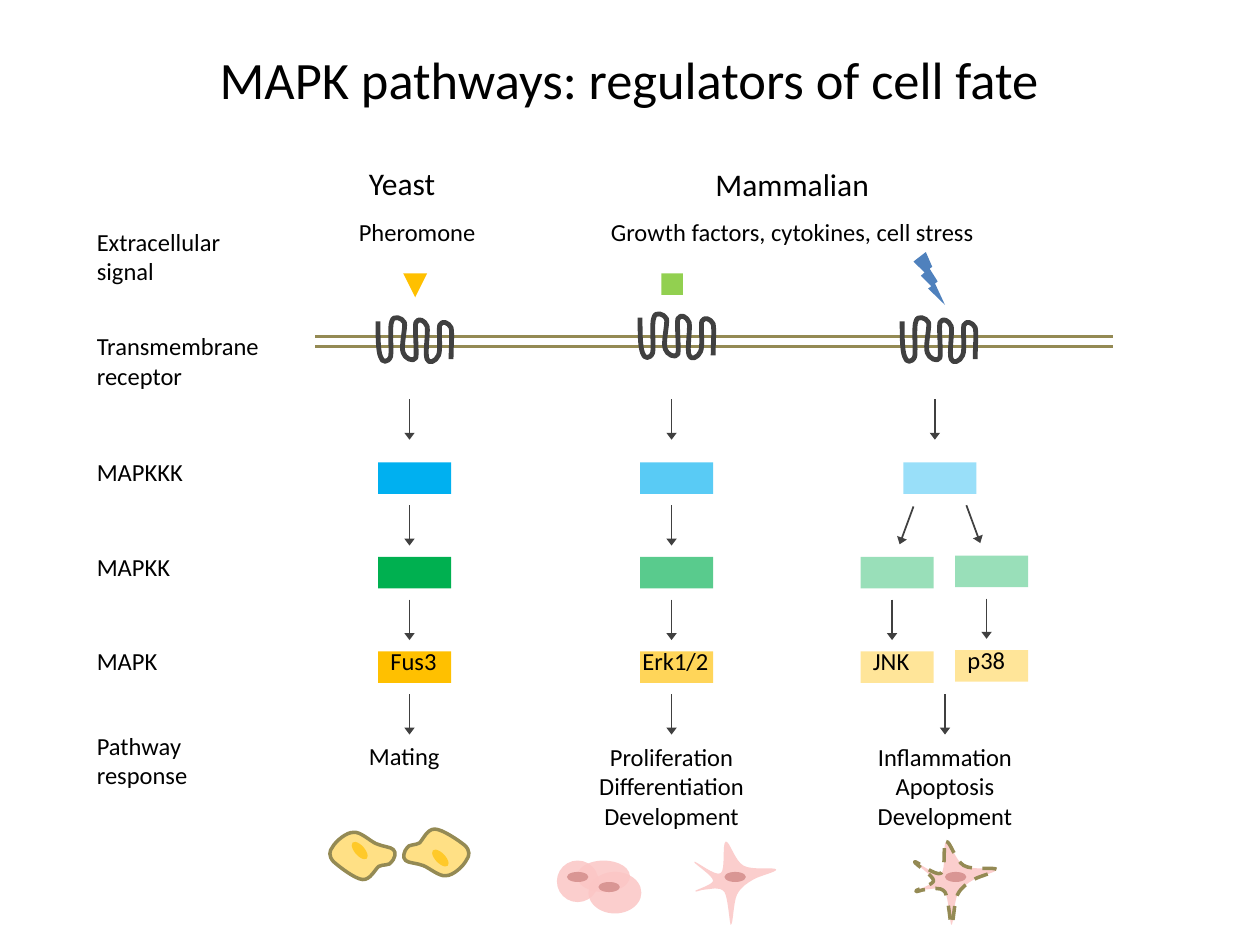
"""Build a slide that compares MAPK pathways in yeast and mammalian cells."""
from dataclasses import dataclass
from math import cos, radians, sin
from typing import Optional

from lxml import etree
from pptx import Presentation
from pptx.dml.color import RGBColor
from pptx.enum.dml import MSO_LINE
from pptx.enum.shapes import MSO_CONNECTOR, MSO_SHAPE
from pptx.enum.text import MSO_ANCHOR, MSO_AUTO_SIZE, PP_ALIGN
from pptx.oxml.ns import qn
from pptx.util import Cm, Pt

RECTANGLE, OVAL = MSO_SHAPE.RECTANGLE, MSO_SHAPE.OVAL
TRIANGLE, BOLT = MSO_SHAPE.ISOSCELES_TRIANGLE, MSO_SHAPE.LIGHTNING_BOLT
STRAIGHT, DASH = MSO_CONNECTOR.STRAIGHT, MSO_LINE.DASH
CENTER, LEFT = PP_ALIGN.CENTER, PP_ALIGN.LEFT
MIDDLE, TOP = MSO_ANCHOR.MIDDLE, MSO_ANCHOR.TOP
FIT_TEXT = MSO_AUTO_SIZE.SHAPE_TO_FIT_TEXT

BLACK = RGBColor(0x00, 0x00, 0x00)
GRAY = RGBColor(0x40, 0x40, 0x40)
OLIVE = RGBColor(0x94, 0x8A, 0x54)
AMBER = RGBColor(0xFF, 0xC0, 0x00)
BLUE = RGBColor(0x4F, 0x81, 0xBD)
LIME = RGBColor(0x92, 0xD0, 0x50)
SKY = RGBColor(0x00, 0xB0, 0xF0)
GREEN = RGBColor(0x00, 0xB0, 0x50)
PINK = RGBColor(0xFB, 0xC6, 0xC5)
ROSE = RGBColor(0xD9, 0x96, 0x94)

FONT = "Calibri"
CM_PER_INCH = 2.54
ARROW_LENGTH = 0.32
BLOCK_SIZE = (0.58, 0.25)
NUCLEUS_SIZE = (0.17, 0.08)
Point = tuple[float, float]

RECEPTOR = [
    (3.58, 2.85), (3.58, 2.75), (3.59, 2.65), (3.58, 2.6), (3.56, 2.56), (3.51, 2.54), (3.49, 2.58),
    (3.48, 2.62), (3.5, 2.78), (3.48, 2.82), (3.46, 2.87), (3.4, 2.89), (3.39, 2.85),
    (3.37, 2.81), (3.4, 2.64), (3.39, 2.59), (3.37, 2.54), (3.32, 2.52), (3.3, 2.56),
    (3.29, 2.6), (3.31, 2.8), (3.3, 2.84), (3.28, 2.88), (3.21, 2.84), (3.2, 2.8),
    (3.18, 2.75), (3.22, 2.6), (3.21, 2.56), (3.19, 2.52), (3.12, 2.5), (3.11, 2.55),
    (3.09, 2.59), (3.11, 2.78), (3.1, 2.83), (3.08, 2.88), (3.03, 2.88), (3.02, 2.83),
    (3, 2.78), (3, 2.67), (3, 2.55)]
STAR_CELL = [
    (5.76, 6.68), (5.79, 6.67), (5.83, 6.83), (5.9, 6.87), (5.97, 6.91), (6.14, 6.88), (6.16, 6.9),
    (6.17, 6.92), (6.03, 6.95), (5.98, 6.98), (5.93, 7.01), (5.88, 7.04), (5.85, 7.1),
    (5.82, 7.16), (5.82, 7.34), (5.8, 7.34), (5.79, 7.33), (5.78, 7.13), (5.75, 7.08),
    (5.71, 7.03), (5.64, 7.06), (5.6, 7.06), (5.56, 7.06), (5.51, 7.09), (5.52, 7.07),
    (5.53, 7.06), (5.66, 7.02), (5.66, 6.99), (5.66, 6.95), (5.5, 6.85), (5.51, 6.84),
    (5.52, 6.83), (5.68, 6.96), (5.72, 6.93), (5.76, 6.91), (5.73, 6.69), (5.76, 6.68)]
YEAST_CELL = [
    (3.45, 6.58), (3.51, 6.58), (3.64, 6.67), (3.69, 6.71), (3.73, 6.75), (3.73, 6.79), (3.7, 6.83),
    (3.68, 6.87), (3.6, 6.95), (3.54, 6.95), (3.49, 6.96), (3.41, 6.89), (3.36, 6.87),
    (3.31, 6.85), (3.24, 6.85), (3.22, 6.83), (3.19, 6.81), (3.21, 6.75), (3.23, 6.73),
    (3.24, 6.7), (3.3, 6.71), (3.33, 6.69), (3.36, 6.66), (3.39, 6.58), (3.45, 6.58)]
YEAST_CENTER, MATE_CENTER, MATE_TURN = (3.46, 6.78), (2.88, 6.78), 183


@dataclass(frozen=True)
class Label:
    text: str
    left: float
    top: float
    width: float = 2
    height: float = 0.34
    size: int = 14
    align: PP_ALIGN = LEFT
    anchor: MSO_ANCHOR = TOP
    fit: bool = True


@dataclass(frozen=True)
class Cascade:
    left: float
    opacity: int
    kinase_top: float = 4.42


@dataclass(frozen=True)
class Outline:
    color: RGBColor
    width: float = 2
    dash: Optional[MSO_LINE] = None


LABELS = [
    Label("MAPK pathways: regulators of cell fate", 0.08, 0, 9.83, 1.25, 30, CENTER, MIDDLE, False),
    Label("Yeast", 2.83, 1.25, 1.33, 0.4, 18),
    Label("Mammalian", 5.58, 1.26, 1.5, 0.4, 18),
    Label("Pheromone", 2.75, 1.67, 1.67),
    Label("Growth factors, cytokines, cell stress", 4.75, 1.67, 3.17),
    Label("Extracellular signal", 0.67, 1.75, 1.67, 0.57),
    Label("Transmembrane receptor", 0.67, 2.58, 2, 0.57),
    Label("MAPKKK", 0.67, 3.58),
    Label("MAPKK", 0.67, 4.33),
    Label("MAPK", 0.67, 5.08),
    Label("Pathway response", 0.67, 5.75, 1.5, 0.57),
    Label("Mating", 2.83, 5.83),
    Label("Proliferation\nDifferentiation\nDevelopment", 4.33, 5.84, 2, 1.04, align=CENTER),
    Label("Inflammation\nApoptosis\nDevelopment", 6.5, 5.84, 2, 1.04, align=CENTER),
    Label("Fus3", 3, 5.08, 0.83),
    Label("Erk1/2", 5, 5.08, 0.83),
    Label("JNK", 6.83, 5.08, 0.83),
    Label("p38", 7.58, 5.07, 0.83),
]
CASCADES = [Cascade(3, 100), Cascade(5.08, 65), Cascade(6.83, 40), Cascade(7.58, 40, 4.41)]
RECEPTOR_SHIFTS = [(0, 0), (2.08, -0.03), (4.16, 0)]


def inch(value: float) -> Cm:
    return Cm(value * CM_PER_INCH)


def paint(shape, color: RGBColor, opacity: int = 100) -> None:
    shape.fill.solid()
    shape.fill.fore_color.rgb = color
    if opacity < 100:
        tone = shape.element.spPr.find(qn("a:solidFill"))[0]
        etree.SubElement(tone, qn("a:alpha"), val=str(opacity * 1000))


def add_figure(page, kind, place: Point, size: Point, color: RGBColor,
               opacity: int = 100, turn: float = 0) -> None:
    figure = page.shapes.add_shape(kind, *map(inch, (*place, *size)))
    figure.shadow.inherit = False
    figure.line.fill.background()
    figure.rotation = turn
    paint(figure, color, opacity)


def add_line(page, start: Point, end: Point, color: RGBColor, width: float, arrow: bool = False) -> None:
    line = page.shapes.add_connector(STRAIGHT, *map(inch, (*start, *end)))
    line.line.color.rgb = color
    line.line.width = Pt(width)
    if arrow:
        stroke = line.element.spPr.find(qn("a:ln"))
        etree.SubElement(stroke, qn("a:tailEnd"), type="triangle", w="med", len="sm")
    etree.SubElement(line.element.spPr, qn("a:effectLst"))


def add_arrow(page, x: float, y: float, shift: float = 0, length: float = ARROW_LENGTH) -> None:
    add_line(page, (x, y), (x + shift, y + length), GRAY, 1, True)


def bend(shape) -> None:
    route = shape.element.spPr.find(".//" + qn("a:path"))
    segments = route.findall(qn("a:lnTo"))
    for index in range(0, len(segments), 3):
        curve = etree.Element(qn("a:cubicBezTo"))
        segments[index].addprevious(curve)
        for segment in segments[index:index + 3]:
            curve.append(segment[0])
            route.remove(segment)


def move(knots: list[Point], dx: float, dy: float = 0) -> list[Point]:
    return [(x + dx, y + dy) for x, y in knots]


def turn_about(knots: list[Point], center: Point, target: Point, degrees: float) -> list[Point]:
    c, s = cos(radians(degrees)), sin(radians(degrees))
    offsets = move(knots, -center[0], -center[1])
    return move([(x * c - y * s, x * s + y * c) for x, y in offsets], *target)


def add_curve(page, knots: list[Point], fill: Optional[RGBColor] = None, opacity: int = 100,
              outline: Optional[Outline] = None) -> None:
    first, *rest = [(inch(x), inch(y)) for x, y in knots]
    builder = page.shapes.build_freeform(*first)
    builder.add_line_segments(rest, close=fill is not None)
    curve = builder.convert_to_shape()
    bend(curve)
    curve.shadow.inherit = False
    if fill is None:
        curve.fill.background()
    else:
        paint(curve, fill, opacity)
    if outline is None:
        curve.line.fill.background()
    else:
        curve.line.color.rgb = outline.color
        curve.line.width = Pt(outline.width)
        if outline.dash is not None:
            curve.line.dash_style = outline.dash


def add_label(page, label: Label) -> None:
    box = page.shapes.add_textbox(*map(inch, (label.left, label.top, label.width, label.height)))
    frame = box.text_frame
    frame.text = label.text
    frame.word_wrap = True
    frame.vertical_anchor = label.anchor
    if label.fit:
        frame.auto_size = FIT_TEXT
    for para in frame.paragraphs:
        para.alignment = label.align
        for span in para.runs:
            span.font.name, span.font.size = FONT, Pt(label.size)
            span.font.color.rgb = BLACK


def draw_signals(page) -> None:
    for y in (2.67, 2.75):
        add_line(page, (2.5, y), (8.83, y), OLIVE, 2)
    add_figure(page, TRIANGLE, (3.2, 2.17), (0.19, 0.19), AMBER, turn=180)
    add_figure(page, RECTANGLE, (5.25, 2.17), (0.17, 0.17), LIME)
    add_figure(page, BOLT, (7.25, 2), (0.25, 0.42), BLUE)
    for shift in RECEPTOR_SHIFTS:
        add_curve(page, move(RECEPTOR, *shift), outline=Outline(GRAY, 2.75))


def draw_cascades(page) -> None:
    for left, opacity in ((3, 100), (5.08, 65), (7.17, 40)):
        add_figure(page, RECTANGLE, (left, 3.67), BLOCK_SIZE, SKY, opacity)
        add_arrow(page, left + 0.25, 3.17)
    for item in CASCADES:
        for row, color in enumerate((GREEN, AMBER)):
            place = (item.left, item.kinase_top + 0.75 * row)
            add_figure(page, RECTANGLE, place, BLOCK_SIZE, color, item.opacity)
        add_arrow(page, item.left + 0.25, item.kinase_top + 0.34)
    for x in (3.25, 5.33):
        add_arrow(page, x, 4.01)
    add_arrow(page, 7.25, 4.02, -0.11, 0.3)
    add_arrow(page, 7.67, 4.01, 0.11, 0.3)
    for x in (3.25, 5.33, 7.5):
        add_arrow(page, x, 5.51)


def draw_cells(page) -> None:
    for place, size in (((4.42, 6.83), (0.33, 0.33)), ((4.58, 6.83), (0.42, 0.25)), ((4.67, 6.92), (0.42, 0.33))):
        add_figure(page, OVAL, place, size, PINK, 86)
    add_curve(page, STAR_CELL, PINK, 86)
    add_curve(page, move(STAR_CELL, 1.75), PINK, 86, Outline(OLIVE, dash=DASH))
    for place in ((4.75, 7), (4.5, 6.92), (5.75, 6.92), (7.5, 6.92)):
        add_figure(page, OVAL, place, NUCLEUS_SIZE, ROSE)
    mate = turn_about(YEAST_CELL, YEAST_CENTER, MATE_CENTER, MATE_TURN)
    for knots, nucleus, turn in ((YEAST_CELL, (3.41, 6.77), 46), (mate, (2.77, 6.71), 46 + MATE_TURN)):
        add_curve(page, knots, AMBER, 48, Outline(OLIVE))
        add_figure(page, OVAL, nucleus, NUCLEUS_SIZE, AMBER, 69, turn)


def main() -> None:
    deck = Presentation()
    deck.slide_width, deck.slide_height = inch(10), inch(7.5)
    page = deck.slides.add_slide(deck.slide_layouts[6])
    draw_signals(page)
    draw_cascades(page)
    draw_cells(page)
    for label in LABELS:
        add_label(page, label)
    deck.save("out.pptx")


if __name__ == "__main__":
    main()
